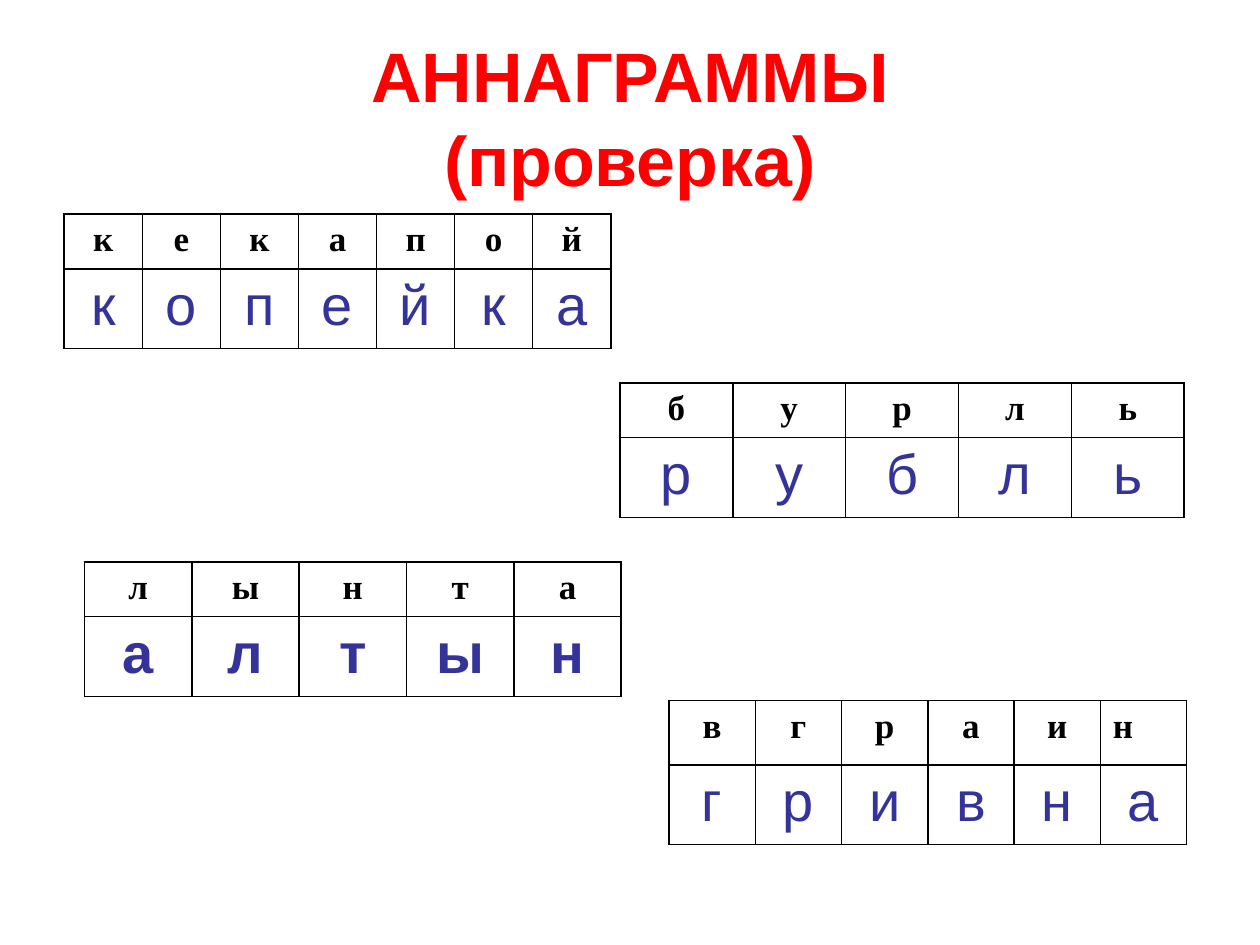
"""Build the slide of anagram tables with their answers."""
from dataclasses import dataclass

from lxml import etree
from pptx import Presentation, util as u
from pptx.dml.color import RGBColor
from pptx.enum import text as t
from pptx.oxml import ns

HUES = {"title": "FF0000", "clue": "000000", "answer": "333399", "line": "000000"}
COLS, ROWS = 1000, 750
UNIT = u.Inches(10) // COLS
INDENT = u.Inches(0.38)
ANSWER_ROW = 60


@dataclass
class Style:
    font: str
    size: int
    hue: str
    bold: bool


@dataclass
class Puzzle:
    clue: str
    answer: str
    left: int
    top: int
    width: int
    clue_row: int = 41
    bold: bool = False
    last: t.PP_ALIGN = t.PP_ALIGN.CENTER


TITLE = Style("Arial", 40, "title", True)
CLUE = Style("Times New Roman", 20, "clue", True)
PUZZLES = [
    Puzzle("кекапой", "копейка", 51, 170, 434),
    Puzzle("бурль", "рубль", 492, 304, 448),
    Puzzle("лынта", "алтын", 67, 446, 426, bold=True),
    Puzzle("вграин", "гривна", 531, 556, 411, clue_row=51, last=t.PP_ALIGN.LEFT),
]


def add_tag(parent, name: str, **attrs: str):
    return etree.SubElement(parent, ns.qn(f"a:{name}"), attrs)


def write(para, words: str, style: Style, align=t.PP_ALIGN.CENTER) -> None:
    para.text = words
    para.alignment = align
    for run in para.runs:
        font = run.font
        font.name, font.size, font.bold = style.font, u.Pt(style.size), style.bold
        font.color.rgb = RGBColor.from_string(HUES[style.hue])


def frame_cell(cell) -> None:
    props = cell._tc.get_or_add_tcPr()
    for side in "LRTB":
        line = add_tag(props, f"ln{side}", w=str(u.Pt(1)))
        add_tag(add_tag(line, "solidFill"), "srgbClr", val=HUES["line"])
    cell.fill.background()


def draw_title(slide) -> None:
    box = slide.shapes.add_textbox(50 * UNIT, 30 * UNIT, 900 * UNIT, 125 * UNIT)
    frame = box.text_frame
    frame.word_wrap = True
    frame.vertical_anchor = t.MSO_ANCHOR.MIDDLE
    write(frame.paragraphs[0], "АННАГРАММЫ\n(проверка)", TITLE)


def draw_puzzle(slide, item: Puzzle) -> None:
    count = len(item.clue)
    high = item.clue_row + ANSWER_ROW
    place = [n * UNIT for n in (item.left, item.top, item.width, high)]
    table = slide.shapes.add_table(2, count, *place).table
    table.first_row = table.horz_banding = False
    table.rows[0].height = item.clue_row * UNIT
    table.rows[1].height = ANSWER_ROW * UNIT
    reply = Style("Arial", 32, "answer", item.bold)
    for col, (clue, letter) in enumerate(zip(item.clue, item.answer)):
        top, low = table.cell(0, col), table.cell(1, col)
        frame_cell(top)
        frame_cell(low)
        align = item.last if col == count - 1 else t.PP_ALIGN.CENTER
        para = top.text_frame.paragraphs[0]
        write(para, clue, CLUE, align)
        props = para._p.get_or_add_pPr()
        props.set("marL", str(INDENT))
        props.set("indent", str(-INDENT))
        para = low.text_frame.paragraphs[0]
        write(para, letter, reply)
        space = add_tag(para._p.get_or_add_pPr(), "spcBef")
        add_tag(space, "spcPct", val="20000")


def main() -> None:
    deck = Presentation()
    deck.slide_width, deck.slide_height = COLS * UNIT, ROWS * UNIT
    slide = deck.slides.add_slide(deck.slide_layouts[6])
    draw_title(slide)
    for item in PUZZLES:
        draw_puzzle(slide, item)
    deck.save("out.pptx")


if __name__ == "__main__":
    main()
